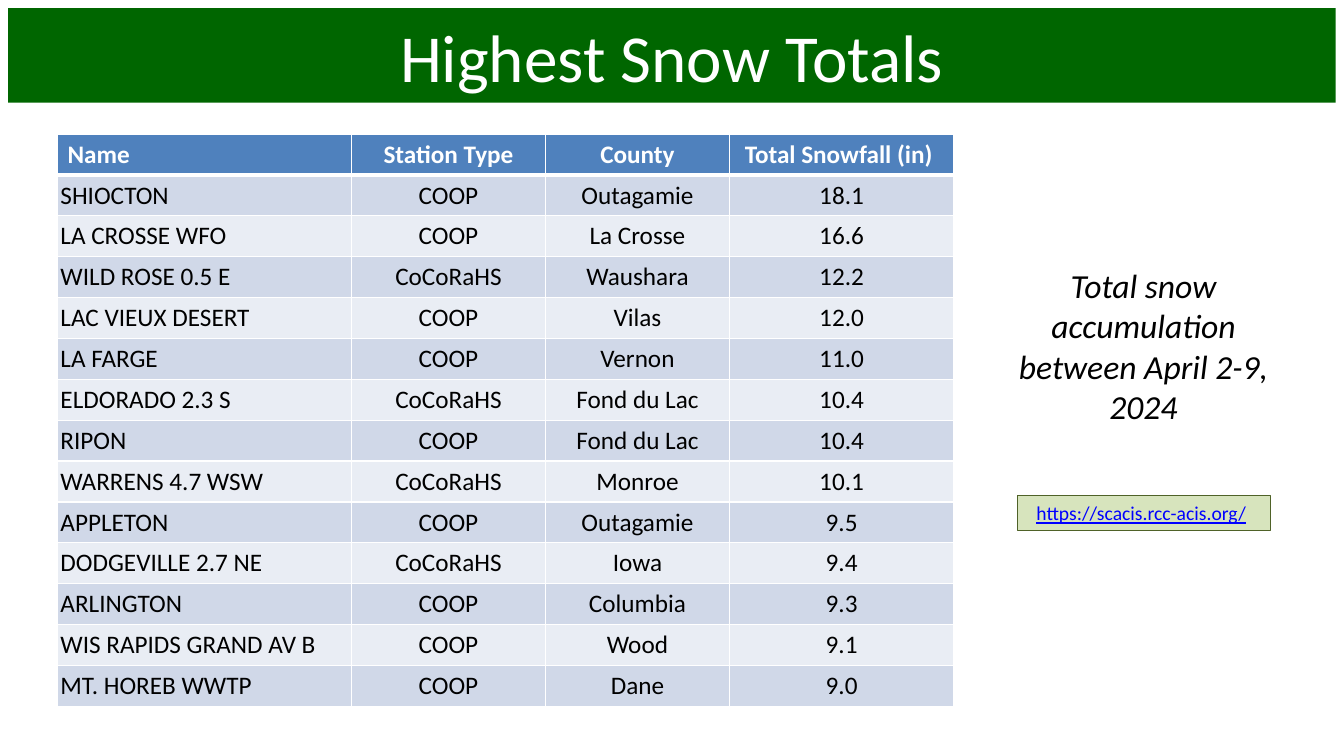
import dataclasses
import typing

import lxml.etree
import pptx
import pptx.dml.color
import pptx.enum.shapes
import pptx.enum.text
import pptx.oxml.ns
import pptx.util

Pt = pptx.util.Pt
ALIGN = pptx.enum.text.PP_ALIGN
ANCHOR = pptx.enum.text.MSO_ANCHOR
FIT = pptx.enum.text.MSO_AUTO_SIZE

COLORS = {
    "white": "FFFFFF", "black": "000000", "banner": "006600",
    "header": "4F81BD", "dark band": "D0D8E8", "light band": "E9EDF4",
    "link": "0000FF", "link box": "D7E4BD", "link border": "4F6228",
}


class Station(typing.NamedTuple):
    name: str
    kind: str
    county: str
    snowfall: str


HEADINGS = Station("Name", "Station Type", "County", "Total Snowfall (in) ")
STATIONS = [
    Station("SHIOCTON", "COOP", "Outagamie", "18.1"),
    Station("LA CROSSE WFO", "COOP", "La Crosse", "16.6"),
    Station("WILD ROSE 0.5 E", "CoCoRaHS", "Waushara", "12.2"),
    Station("LAC VIEUX DESERT", "COOP", "Vilas", "12.0"),
    Station("LA FARGE", "COOP", "Vernon", "11.0"),
    Station("ELDORADO 2.3 S", "CoCoRaHS", "Fond du Lac", "10.4"),
    Station("RIPON", "COOP", "Fond du Lac", "10.4"),
    Station("WARRENS 4.7 WSW", "CoCoRaHS", "Monroe", "10.1"),
    Station("APPLETON", "COOP", "Outagamie", "9.5"),
    Station("DODGEVILLE 2.7 NE", "CoCoRaHS", "Iowa", "9.4"),
    Station("ARLINGTON", "COOP", "Columbia", "9.3"),
    Station("WIS RAPIDS GRAND AV B", "COOP", "Wood", "9.1"),
    Station("MT. HOREB WWTP", "COOP", "Dane", "9.0"),
]
COLUMN_WIDTHS = [210.24, 138.24, 131.76, 159.84]
ROW_HEIGHT = 29.21


@dataclasses.dataclass
class Span:
    text: str
    size: float
    color: str = "black"
    extras: dict[str, bool] = dataclasses.field(default_factory=dict)


@dataclasses.dataclass
class Panel:
    left: float
    top: float
    width: float
    height: float
    spans: list[Span]
    fill: str = ""
    border: str = ""
    frame: dict[str, typing.Any] = dataclasses.field(default_factory=dict)


PANELS = [
    Panel(726.48, 354.24, 180.72, 24.48,
          [Span("https://scacis.rcc-acis.org/", 14, "link", {"underline": True}),
           Span(" ", 14)],
          "link box", "link border",
          {"vertical_anchor": ANCHOR.TOP, "auto_size": FIT.SHAPE_TO_FIT_TEXT}),
    Panel(5.76, 5.76, 948.24, 67.68, [Span("Highest Snow Totals", 48, "white")],
          "banner", frame={"vertical_anchor": ANCHOR.MIDDLE}),
    Panel(714.96, 185.76, 203.76, 123.84,
          [Span("Total snow accumulation between April 2-9, 2024", 24,
                extras={"italic": True})],
          frame={"vertical_anchor": ANCHOR.TOP, "auto_size": FIT.SHAPE_TO_FIT_TEXT}),
]


def rgb(name: str) -> pptx.dml.color.RGBColor:
    return pptx.dml.color.RGBColor.from_string(COLORS[name])


def apply(target: typing.Any, values: dict[str, typing.Any]) -> None:
    for name, value in values.items():
        setattr(target, name, value)


def write_spans(para: typing.Any, spans: list[Span], alignment: typing.Any) -> None:
    para.alignment = alignment
    for span in spans:
        run = para.add_run()
        run.text = span.text
        apply(run.font, {"name": "Calibri", "size": Pt(span.size), **span.extras})
        run.font.color.rgb = rgb(span.color)


def draw_panel(page: typing.Any, panel: Panel) -> None:
    place = [Pt(v) for v in (panel.left, panel.top, panel.width, panel.height)]
    if panel.fill:
        box = page.shapes.add_shape(pptx.enum.shapes.MSO_SHAPE.RECTANGLE, *place)
        box.shadow.inherit = False
        box.fill.solid()
        box.fill.fore_color.rgb = rgb(panel.fill)
        if panel.border:
            box.line.color.rgb = rgb(panel.border)
            box.line.width = Pt(0.75)
        else:
            box.line.fill.background()
    else:
        box = page.shapes.add_textbox(*place)
    apply(box.text_frame, {"word_wrap": True, **panel.frame})
    write_spans(box.text_frame.paragraphs[0], panel.spans, ALIGN.CENTER)


def set_borders(cell: typing.Any, top: float, bottom: float) -> None:
    """Give a cell white edges; the side edges are 1 point wide."""
    qn = pptx.oxml.ns.qn
    properties = cell._tc.get_or_add_tcPr()
    edges = {"a:lnL": 1, "a:lnR": 1, "a:lnT": top, "a:lnB": bottom}
    for position, (tag, width) in enumerate(edges.items()):
        line = lxml.etree.Element(qn(tag), w=str(int(Pt(width))))
        fill = lxml.etree.SubElement(line, qn("a:solidFill"))
        lxml.etree.SubElement(fill, qn("a:srgbClr"), val=COLORS["white"])
        properties.insert(position, line)


def draw_table(page: typing.Any, left: float, top: float) -> None:
    rows = [HEADINGS, *STATIONS]
    table = page.shapes.add_table(
        len(rows), len(COLUMN_WIDTHS), Pt(left), Pt(top),
        Pt(sum(COLUMN_WIDTHS)), Pt(ROW_HEIGHT * len(rows))).table
    for column, width in zip(table.columns, COLUMN_WIDTHS):
        column.width = Pt(width)
    body_format = {
        "vertical_anchor": ANCHOR.MIDDLE,
        "margin_left": Pt(2.16), "margin_right": Pt(2.16),
        "margin_top": Pt(1.44), "margin_bottom": Pt(1.44),
    }
    for row_index, station in enumerate(rows):
        table.rows[row_index].height = Pt(ROW_HEIGHT)
        is_header = row_index == 0
        band = "dark band" if row_index % 2 else "light band"
        for column_index, text in enumerate(station):
            cell = table.cell(row_index, column_index)
            apply(cell, {} if is_header else body_format)
            cell.fill.solid()
            cell.fill.fore_color.rgb = rgb("header" if is_header else band)
            set_borders(cell, 3 if row_index == 1 else 1, 3 if is_header else 1)
            span = Span(text, 18, "white" if is_header else "black",
                        {"bold": is_header})
            write_spans(cell.text_frame.paragraphs[0], [span],
                        ALIGN.CENTER if column_index else ALIGN.LEFT)


def main() -> None:
    deck = pptx.Presentation()
    apply(deck, {"slide_width": Pt(960), "slide_height": Pt(540)})
    page = deck.slides.add_slide(deck.slide_layouts[6])
    link, banner, period = PANELS
    draw_panel(page, link)
    draw_panel(page, banner)
    draw_table(page, 41.04, 95.76)
    draw_panel(page, period)
    deck.save("out.pptx")


if __name__ == "__main__":
    main()
